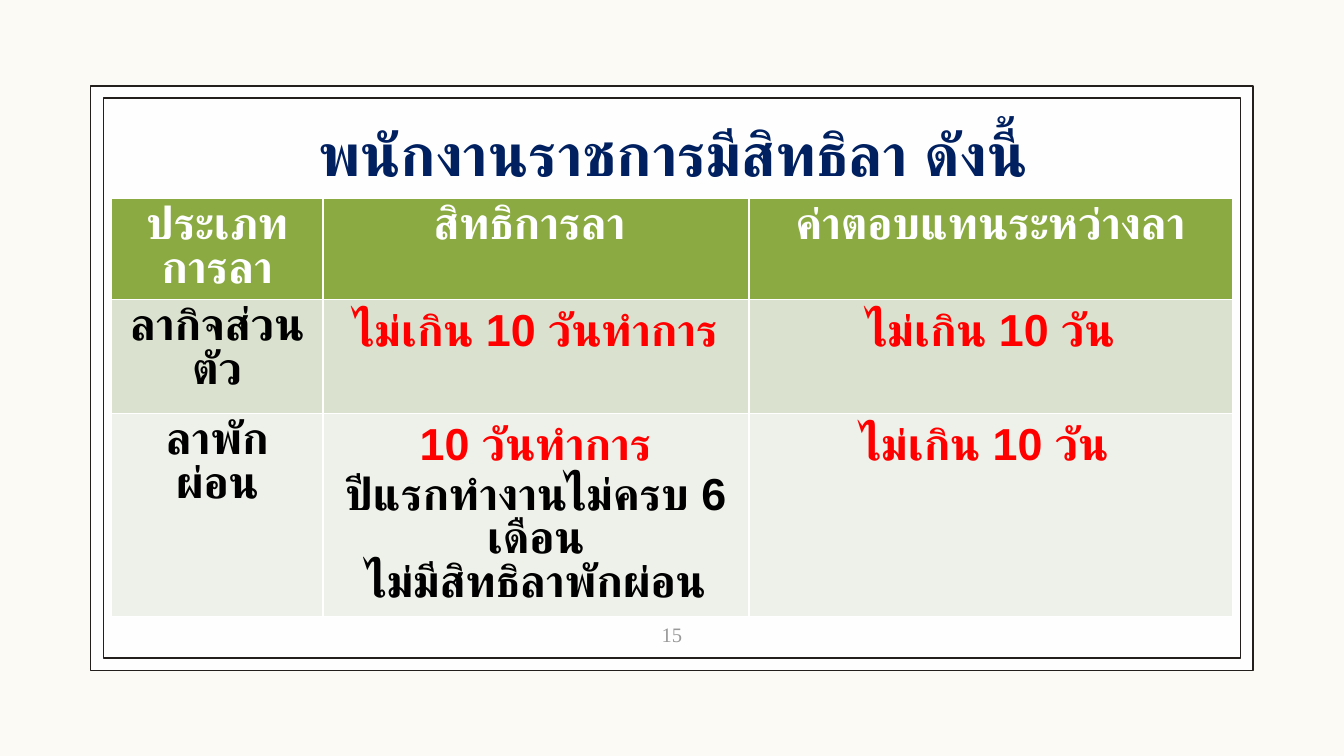
from lxml import etree
from pptx import Presentation
from pptx import util as u
from pptx.dml.color import RGBColor
from pptx.enum import lang, shapes, text
from pptx.oxml import ns

IVORY = RGBColor(0xFB, 0xFA, 0xF5)
WHITE = RGBColor(0xFF, 0xFF, 0xFF)
INK = RGBColor(0x23, 0x1F, 0x1C)
NAVY = RGBColor(0x00, 0x20, 0x60)
GRAY = RGBColor(0x99, 0x99, 0x99)
RED = RGBColor(0xFF, 0x00, 0x00)
BLACK = RGBColor(0x00, 0x00, 0x00)
ROW_FILLS = [RGBColor(0x8B, 0xAB, 0x42), RGBColor(0xDA, 0xE2, 0xCF), RGBColor(0xEE, 0xF1, 0xE9)]

TITLE = "พนักงานราชการมีสิทธิลา ดังนี้"
PAGE_NUMBER = "15"
LEAVE_ROWS = [
    [
        [("ประเภทการลา", WHITE)],
        [("สิทธิการลา ", WHITE)],
        [("ค่าตอบแทนระหว่างลา", WHITE)],
    ],
    [
        [("ลากิจส่วนตัว", BLACK)],
        [("ไม่เกิน 10 วันทำการ", RED)],
        [("ไม่เกิน 10 วัน", RED)],
    ],
    [
        [("ลาพักผ่อน", BLACK)],
        [("10 วันทำการ", RED), ("ปีแรกทำงานไม่ครบ 6 เดือน", BLACK), ("ไม่มีสิทธิลาพักผ่อน", BLACK)],
        [("ไม่เกิน 10 วัน ", RED)],
    ],
]
COLUMN_WIDTHS = [3.99, 8.05, 9.14]
ROW_HEIGHTS = [1.91, 2.15, 3.84]
TABLE_LEFT, TABLE_TOP = 2.11, 3.75
FRAMES = [(1.71, 1.63, 21.97, 11.05, WHITE), (1.96, 1.85, 21.49, 10.59, None)]
TITLE_BOX = (2.11, 1.96, 21.21, 10.01)
NUMBER_BOX = (11.94, 11.51, 1.52, 0.69)

TITLE_FONT = {"name": "Arial", "size": u.Pt(32), "bold": True}
TABLE_FONT = {"name": "Arial", "size": u.Pt(24), "bold": True}
NUMBER_FONT = {"name": "Times New Roman", "size": u.Pt(11), "bold": False}
TIGHT_LINE = u.Pt(23.5)
DIGIT_LINE_GAP = u.Pt(3)
FRAME_FORMAT = {
    "word_wrap": True,
    "auto_size": text.MSO_AUTO_SIZE.NONE,
    "vertical_anchor": text.MSO_ANCHOR.TOP,
    "margin_left": u.Cm(0.25),
    "margin_right": u.Cm(0.25),
    "margin_top": u.Cm(0.25),
    "margin_bottom": u.Cm(0.25),
}


def set_attributes(target, values):
    for name, value in values.items():
        setattr(target, name, value)


def write_lines(text_frame, lines, font_format):
    for index, (line, color) in enumerate(lines):
        paragraph = text_frame.add_paragraph() if index else text_frame.paragraphs[0]
        paragraph.alignment = text.PP_ALIGN.CENTER
        run = paragraph.add_run()
        run.text = line
        set_attributes(run.font, font_format)
        run.font.language_id = lang.MSO_LANGUAGE_ID.THAI
        run.font.color.rgb = color
        properties = run._r.get_or_add_rPr()
        etree.SubElement(properties, ns.qn("a:cs"), typeface=font_format["name"])


def tighten_lines(text_frame):
    for index, paragraph in enumerate(text_frame.paragraphs):
        has_digit = any(character.isdigit() for character in paragraph.text)
        if index or not has_digit:
            paragraph.line_spacing = TIGHT_LINE
        if index and has_digit:
            paragraph.space_before = DIGIT_LINE_GAP


def add_frame(slide, left, top, width, height, color):
    shape = slide.shapes.add_shape(
        shapes.MSO_SHAPE.RECTANGLE, *map(u.Cm, (left, top, width, height))
    )
    shape.shadow.inherit = False
    shape.line.color.rgb = INK
    shape.line.width = u.Pt(0.75)
    if color is None:
        shape.fill.background()
        return
    shape.fill.solid()
    shape.fill.fore_color.rgb = color
    fill_color = shape._element.spPr.find(".//" + ns.qn("a:srgbClr"))
    etree.SubElement(fill_color, ns.qn("a:alpha"), val="93000")


def add_leave_table(slide):
    table = slide.shapes.add_table(
        len(LEAVE_ROWS), len(COLUMN_WIDTHS), u.Cm(TABLE_LEFT), u.Cm(TABLE_TOP),
        u.Cm(sum(COLUMN_WIDTHS)), u.Cm(sum(ROW_HEIGHTS)),
    ).table
    for column, width in zip(table.columns, COLUMN_WIDTHS):
        column.width = u.Cm(width)
    for row, height, fill, entries in zip(table.rows, ROW_HEIGHTS, ROW_FILLS, LEAVE_ROWS):
        row.height = u.Cm(height)
        for cell, lines in zip(row.cells, entries):
            cell.fill.solid()
            cell.fill.fore_color.rgb = fill
            write_lines(cell.text_frame, lines, TABLE_FONT)
            tighten_lines(cell.text_frame)


def main():
    presentation = Presentation()
    presentation.slide_width, presentation.slide_height = u.Cm(25.4), u.Cm(14.29)
    slide = presentation.slides.add_slide(presentation.slide_layouts[5])
    slide.background.fill.solid()
    slide.background.fill.fore_color.rgb = IVORY

    for frame in FRAMES:
        add_frame(slide, *frame)

    title = slide.shapes.title
    slide.shapes._spTree.append(title._element)
    set_attributes(title, dict(zip(("left", "top", "width", "height"), map(u.Cm, TITLE_BOX))))
    set_attributes(title.text_frame, FRAME_FORMAT)
    write_lines(title.text_frame, [(TITLE, NAVY)], TITLE_FONT)

    number = slide.shapes.add_textbox(*map(u.Cm, NUMBER_BOX))
    set_attributes(number.text_frame, FRAME_FORMAT)
    write_lines(number.text_frame, [(PAGE_NUMBER, GRAY)], NUMBER_FONT)

    add_leave_table(slide)
    presentation.save("out.pptx")


if __name__ == "__main__":
    main()
